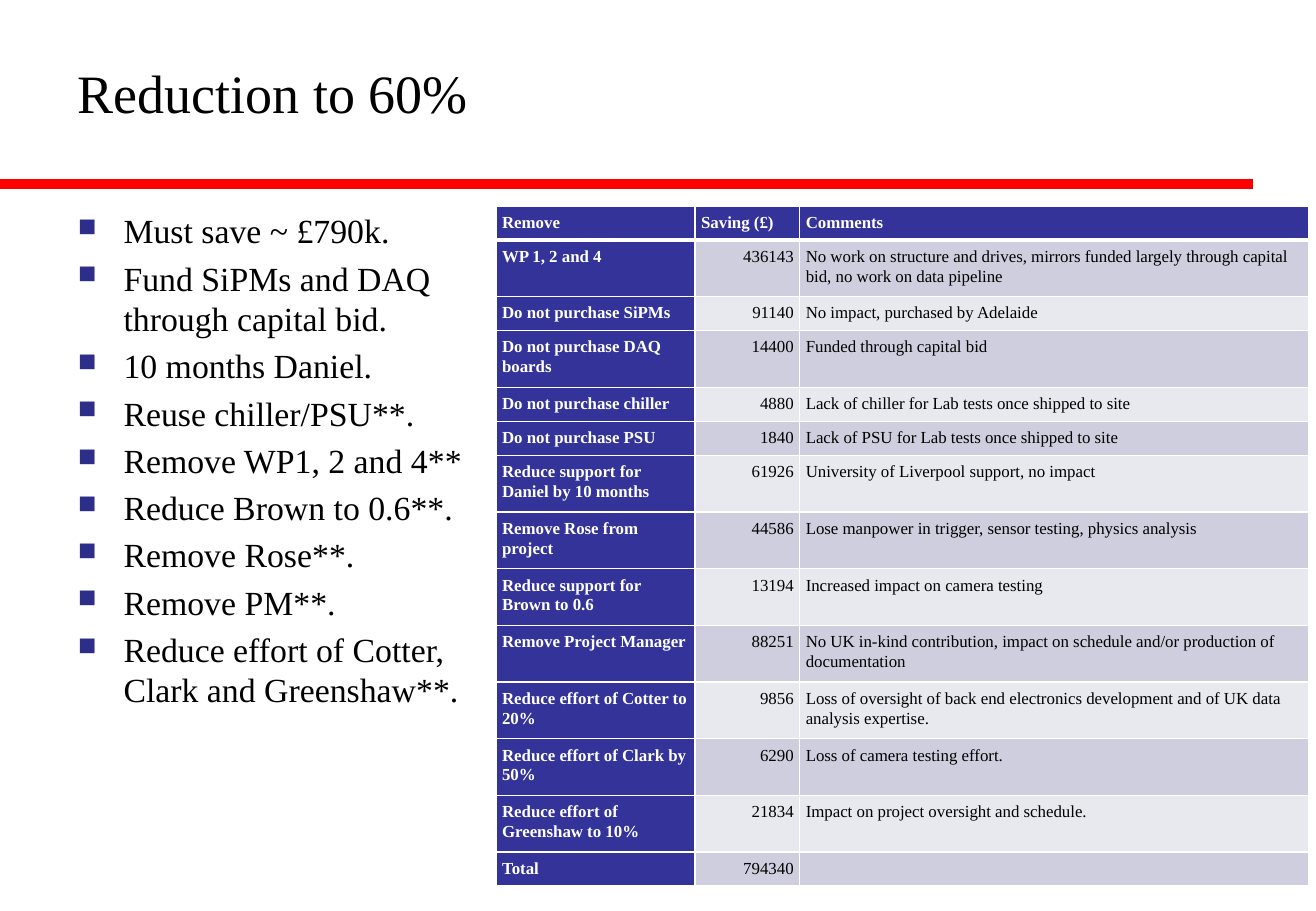
from lxml import etree
from pptx import Presentation
from pptx import util as u
from pptx.dml.color import RGBColor
from pptx.enum import shapes, text
from pptx.oxml import ns

# Content
TITLE = "Reduction to 60%"
POINTS = [
    "Must save ~ £790k.",
    "Fund SiPMs and DAQ through capital bid.",
    "10 months Daniel.",
    "Reuse chiller/PSU**.",
    "Remove WP1, 2 and 4**",
    "Reduce Brown to 0.6**.",
    "Remove Rose**.",
    "Remove PM**.",
    "Reduce effort of Cotter, Clark and Greenshaw**.",
]
HEADER = ("Remove", "Saving (£)", "Comments")
# Each saving: item, amount, comment, lines of text in the row
SAVINGS = [
    ("WP 1, 2 and 4", 436143, "No work on structure and drives, mirrors funded "
     "largely through capital bid, no work on data pipeline", 2),
    ("Do not purchase SiPMs", 91140, "No impact, purchased by Adelaide", 1),
    ("Do not purchase DAQ boards", 14400, "Funded through capital bid", 2),
    ("Do not purchase chiller", 4880,
     "Lack of chiller for Lab tests once shipped to site", 1),
    ("Do not purchase PSU", 1840,
     "Lack of PSU for Lab tests once shipped to site", 1),
    ("Reduce support for Daniel by 10 months", 61926,
     "University of Liverpool support, no impact", 2),
    ("Remove Rose from project", 44586,
     "Lose manpower in trigger, sensor testing, physics analysis", 2),
    ("Reduce support for Brown to 0.6", 13194,
     "Increased impact on camera testing", 2),
    ("Remove Project Manager", 88251, "No UK in-kind contribution, impact on "
     "schedule and/or production of documentation", 2),
    ("Reduce effort of Cotter to 20%", 9856, "Loss of oversight of back end "
     "electronics development and of UK data analysis expertise.", 2),
    ("Reduce effort of Clark by 50%", 6290, "Loss of camera testing effort.", 2),
    ("Reduce effort of Greenshaw to 10%", 21834,
     "Impact on project oversight and schedule.", 2),
    ("Total", 794340, "", 1),
]

# Style
FONT = "Times New Roman"
BLACK = RGBColor(0x00, 0x00, 0x00)
WHITE = RGBColor(0xFF, 0xFF, 0xFF)
RED = RGBColor(0xFF, 0x00, 0x00)
BULLET_BLUE = RGBColor(0x2D, 0x2D, 0x8A)
HEADER_BLUE = RGBColor(0x33, 0x33, 0x99)
BANDS = (RGBColor(0xCE, 0xCE, 0xDE), RGBColor(0xE8, 0xE8, 0xEF))
COLUMN_WIDTHS = (118, 62, 301.5)
ROW_HEIGHTS = {1: 20.2, 2: 33.6}
CELL_INSET = u.Pt(3.6)


def place(shape, left, top, width, height):
    shape.left, shape.top = u.Pt(left), u.Pt(top)
    shape.width, shape.height = u.Pt(width), u.Pt(height)


def style_runs(para, size, color, bold=False):
    for span in para.runs:
        span.font.name, span.font.size = FONT, u.Pt(size)
        span.font.bold, span.font.color.rgb = bold, color


def add_element(parent, tag, **attributes):
    return etree.SubElement(parent, ns.qn(tag), attributes)


def add_bullet(para):
    props = para._p.get_or_add_pPr()
    props.set("marL", str(u.Pt(27)))
    props.set("indent", str(-u.Pt(27)))
    color = add_element(props, "a:buClr")
    add_element(color, "a:srgbClr", val=str(BULLET_BLUE))
    add_element(props, "a:buSzPct", val="75000")
    add_element(props, "a:buFont", typeface="Wingdings", charset="2")
    add_element(props, "a:buChar", char="n")


def add_borders(cell, bottom_width):
    props = cell._tc.get_or_add_tcPr()
    for side, width in (("L", 1), ("R", 1), ("T", 1), ("B", bottom_width)):
        line = add_element(props, "a:ln" + side, w=str(u.Pt(width)))
        fill = add_element(line, "a:solidFill")
        add_element(fill, "a:srgbClr", val=str(WHITE))


def fill_cell(cell, value, fill, color, bold, align, bottom_width):
    cell.margin_left = cell.margin_right = CELL_INSET
    cell.margin_top = cell.margin_bottom = CELL_INSET
    add_borders(cell, bottom_width)
    cell.fill.solid()
    cell.fill.fore_color.rgb = fill
    para = cell.text_frame.paragraphs[0]
    para.text = value
    para.alignment, para.line_spacing = align, 1.07
    style_runs(para, 10, color, bold)
    if not value:
        add_element(para._p, "a:endParaRPr", sz="1000")


deck = Presentation()
deck.slide_width, deck.slide_height = u.Pt(780), u.Pt(540)
page = deck.slides.add_slide(deck.slide_layouts[1])

# Red rule under the title
rule = page.shapes.add_connector(
    shapes.MSO_CONNECTOR.STRAIGHT, 0, u.Pt(109), u.Pt(742.5), u.Pt(109))
rule.line.color.rgb, rule.line.width = RED, u.Pt(6)
add_element(rule._element.spPr, "a:effectLst")

# Title
title = page.shapes.title
place(title, 39, 9.5, 702, 90)
title.text_frame.text = TITLE
title.text_frame.vertical_anchor = text.MSO_ANCHOR.MIDDLE
title.text_frame.paragraphs[0].alignment = text.PP_ALIGN.LEFT
style_runs(title.text_frame.paragraphs[0], 32, BLACK)

# Bulleted list
body = page.placeholders[1]
place(body, 39, 121, 266.5, 405)
body.text_frame.text = "\n".join(POINTS)
body.text_frame.auto_size = text.MSO_AUTO_SIZE.NONE
for index, para in enumerate(body.text_frame.paragraphs):
    add_bullet(para)
    para.line_spacing = u.Pt(24)
    para.space_before = u.Pt(4 if index else 0)
    style_runs(para, 20, BLACK)

# Savings table
heights = [ROW_HEIGHTS[lines] for lines in [1] + [row[3] for row in SAVINGS]]
table = page.shapes.add_table(
    len(heights), len(HEADER), u.Pt(294), u.Pt(122),
    u.Pt(sum(COLUMN_WIDTHS)), u.Pt(sum(heights))).table
for column, width in zip(table.columns, COLUMN_WIDTHS):
    column.width = u.Pt(width)
for row, height in zip(table.rows, heights):
    row.height = u.Pt(height)

for r, values in enumerate([HEADER] + [row[:3] for row in SAVINGS]):
    for c, value in enumerate(values):
        heading = r == 0 or c == 0
        fill_cell(
            table.cell(r, c), str(value),
            fill=HEADER_BLUE if heading else BANDS[(r - 1) % 2],
            color=WHITE if heading else BLACK,
            bold=heading,
            align=text.PP_ALIGN.RIGHT if r and c == 1 else text.PP_ALIGN.LEFT,
            bottom_width=1 if r else 3)

deck.save("out.pptx")
